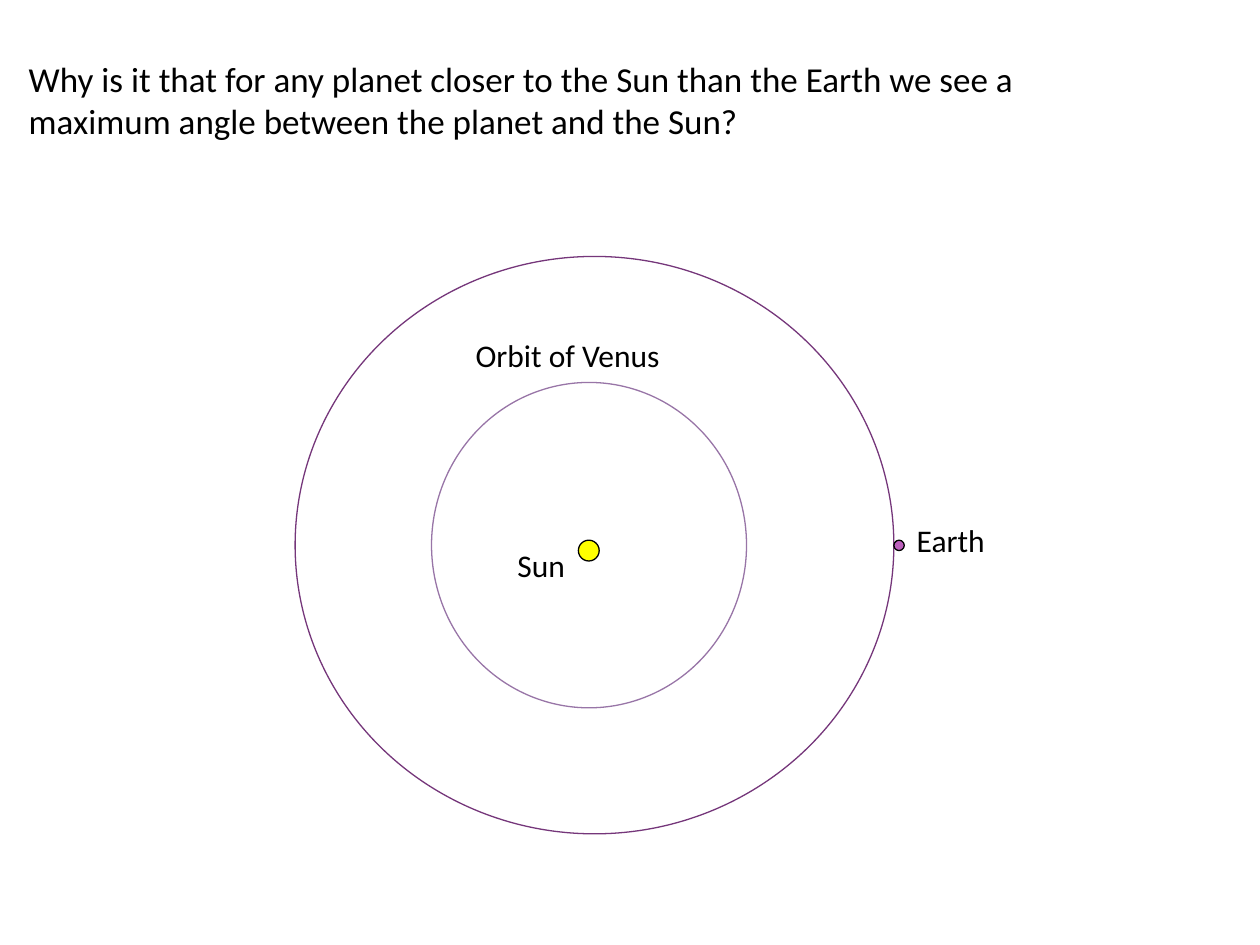
from dataclasses import dataclass

from pptx import Presentation
from pptx import util as u
from pptx.dml.color import RGBColor
from pptx.enum import shapes, text
from pptx.slide import Slide


def colour(value):
    return RGBColor.from_string(value)


def write(frame, content, font="Calibri", size=18, ink="000000"):
    paragraph = frame.paragraphs[0]
    paragraph.text = content
    paragraph.font.name = font
    paragraph.font.size = u.Pt(size)
    paragraph.font.color.rgb = colour(ink)


@dataclass
class OrbitDiagram:
    """Draw labelled orbits and bodies on a slide in one style."""

    slide: Slide
    font: str = "Calibri"
    ink: str = "000000"
    line_width: float = 0.75

    def label(self, content, left, top, width, height=1.02, size=18):
        box = self.slide.shapes.add_textbox(
            u.Cm(left), u.Cm(top), u.Cm(width), u.Cm(height))
        frame = box.text_frame
        frame.word_wrap = True
        frame.auto_size = text.MSO_AUTO_SIZE.SHAPE_TO_FIT_TEXT
        write(frame, content, font=self.font, size=size, ink=self.ink)

    def ellipse(self, left, top, width, height, line, fill=None):
        shape = self.slide.shapes.add_shape(
            shapes.MSO_SHAPE.OVAL,
            u.Cm(left), u.Cm(top), u.Cm(width), u.Cm(height))
        shape.shadow.inherit = False
        shape.line.color.rgb = colour(line)
        shape.line.width = u.Pt(self.line_width)
        if fill:
            shape.fill.solid()
            shape.fill.fore_color.rgb = colour(fill)
        else:
            shape.fill.background()

    def body(self, left, top, diameter, fill):
        self.ellipse(left, top, diameter, diameter, self.ink, fill)


def main():
    presentation = Presentation()
    presentation.slide_width = u.Cm(25.4)
    presentation.slide_height = u.Cm(19.05)
    slide = presentation.slides.add_slide(presentation.slide_layouts[6])
    diagram = OrbitDiagram(slide)

    diagram.label(
        "Why is it that for any planet closer to the Sun than the Earth "
        "we see a maximum angle between the planet and the Sun?",
        0.33, 1.04, 23.37, 1.96, size=20)
    earth_orbit, venus_orbit = "75367A", "9875A7"
    sun, earth = "FFFF00", "BC5FBC"
    diagram.ellipse(5.95, 5.17, 12.07, 11.64, earth_orbit)
    diagram.ellipse(8.7, 7.71, 6.35, 6.56, venus_orbit)
    diagram.body(11.66, 10.89, 0.42, sun)
    diagram.body(18.02, 10.89, 0.21, earth)
    diagram.label("Earth", 18.23, 10.38, 2.74)
    diagram.label("Sun", 10.18, 10.89, 2.74)
    diagram.label("Orbit of Venus", 9.34, 6.65, 6.15)

    presentation.save("out.pptx")


if __name__ == "__main__":
    main()
